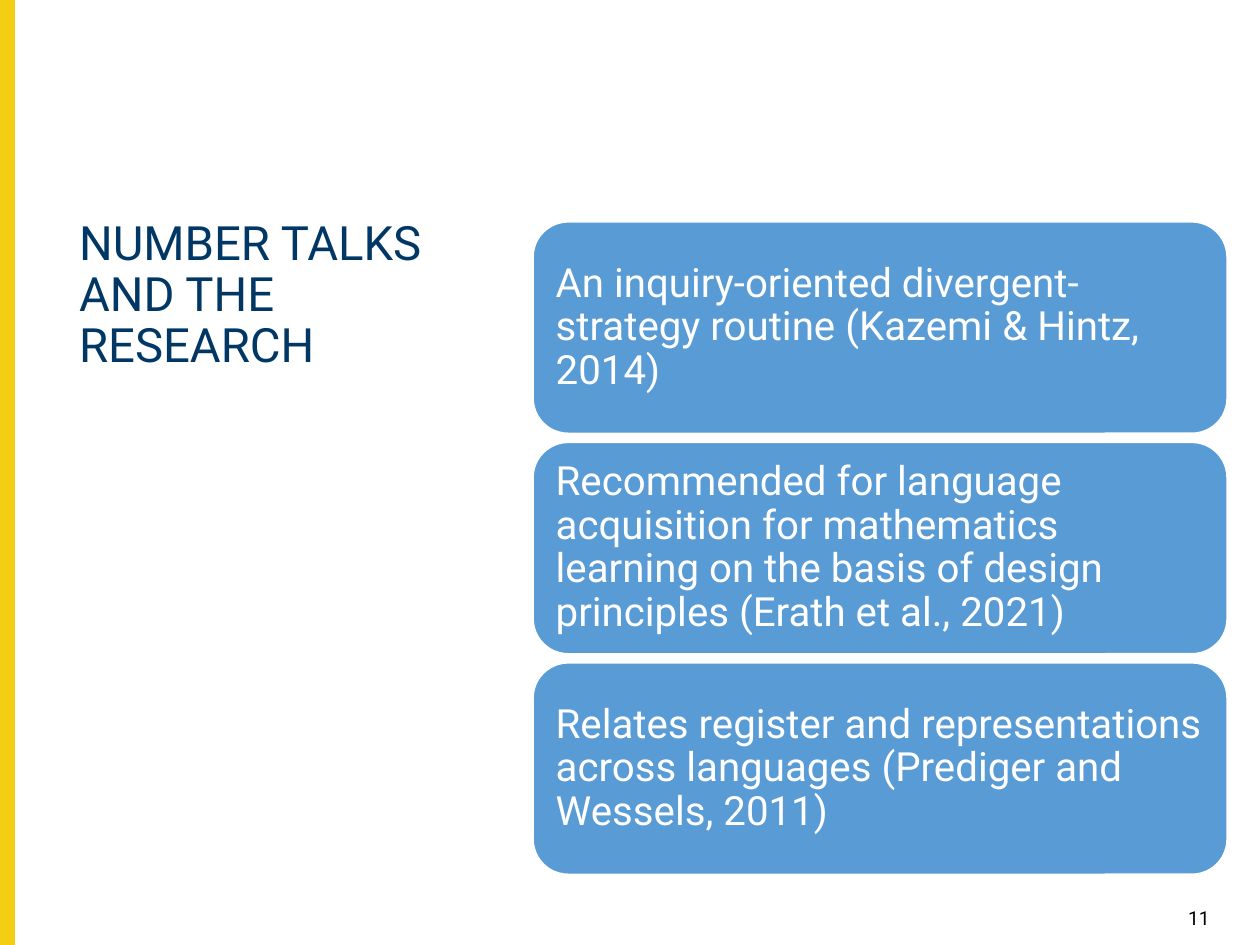
from dataclasses import dataclass

from pptx import Presentation
from pptx.dml.color import RGBColor
from pptx.enum.shapes import MSO_SHAPE
from pptx.enum.text import MSO_ANCHOR, PP_ALIGN
from pptx.shapes.autoshape import Shape
from pptx.slide import Slide
from pptx.util import Inches, Pt


@dataclass(frozen=True)
class Theme:
    """Colours, font and type sizes of the slide."""
    font: str = "Roboto"
    navy: str = "003764"
    yellow: str = "F4CE12"
    blue: str = "599BD5"
    white: str = "FFFFFF"
    black: str = "000000"
    title: int = 27
    body: int = 23
    number: int = 11


@dataclass(frozen=True)
class Box:
    """A rectangle in inches."""
    left: float
    top: float
    width: float
    height: float

    def emu(self) -> list[int]:
        """Give the position and size as lengths."""
        return [Inches(v) for v in (self.left, self.top, self.width, self.height)]


@dataclass(frozen=True)
class TextStyle:
    """How a block of text is set."""
    size: int
    color: str
    anchor: MSO_ANCHOR
    align: PP_ALIGN = PP_ALIGN.LEFT
    spacing: float = 0.9
    margin_y: float = 0.1


THEME = Theme()
WIDTH, HEIGHT = 10, 7.5
FIRST_CARD = Box(4.23, 1.76, 5.51, 1.68)
CARD_PITCH = 1.75
CARD_STYLE = TextStyle(THEME.body, THEME.white, MSO_ANCHOR.MIDDLE)
CARDS = (
    "An inquiry-oriented divergent-strategy routine (Kazemi & Hintz, 2014)",
    "Recommended for language acquisition for mathematics learning on the basis "
    "of design principles (Erath et al., 2021)",
    "Relates register and representations across languages (Prediger and Wessels, 2011)",
)


def write(s: Shape, text: str, style: TextStyle) -> None:
    """Set one styled paragraph in a shape."""
    tf = s.text_frame
    frame = {"word_wrap": True, "vertical_anchor": style.anchor,
             "margin_left": Inches(0.1), "margin_right": Inches(0.1),
             "margin_top": Inches(style.margin_y),
             "margin_bottom": Inches(style.margin_y)}
    for name, value in frame.items():
        setattr(tf, name, value)
    p = tf.paragraphs[0]
    p.alignment, p.line_spacing = style.align, style.spacing
    r = p.add_run()
    r.text = text
    for name, value in {"name": THEME.font, "size": Pt(style.size)}.items():
        setattr(r.font, name, value)
    r.font.color.rgb = RGBColor.from_string(style.color)


def add_text(slide: Slide, box: Box, text: str, style: TextStyle) -> None:
    """Add a text box."""
    write(slide.shapes.add_textbox(*box.emu()), text, style)


def add_panel(slide: Slide, kind: MSO_SHAPE, box: Box, fill: str, line: str) -> Shape:
    """Add a filled shape with a thin outline."""
    s = slide.shapes.add_shape(kind, *box.emu())
    s.shadow.inherit = False
    s.fill.solid()
    s.fill.fore_color.rgb = RGBColor.from_string(fill)
    s.line.color.rgb = RGBColor.from_string(line)
    s.line.width = Pt(1)
    return s


def add_card(slide: Slide, row: int, text: str) -> None:
    """Add one rounded card in the given row."""
    box = Box(FIRST_CARD.left, FIRST_CARD.top + row * CARD_PITCH,
              FIRST_CARD.width, FIRST_CARD.height)
    s = add_panel(slide, MSO_SHAPE.ROUNDED_RECTANGLE, box, THEME.blue, THEME.white)
    write(s, text, CARD_STYLE)


def main() -> None:
    """Build the slide and save it."""
    prs = Presentation()
    prs.slide_width, prs.slide_height = Inches(WIDTH), Inches(HEIGHT)
    slide = prs.slides.add_slide(prs.slide_layouts[6])
    add_panel(slide, MSO_SHAPE.RECTANGLE, Box(0, 0, 0.11, HEIGHT),
              THEME.yellow, THEME.yellow)
    add_text(slide, Box(0.53, 1.52, 3.46, 1.54), "NUMBER TALKS AND THE RESEARCH",
             TextStyle(THEME.title, THEME.navy, MSO_ANCHOR.BOTTOM))
    add_text(slide, Box(9.2, 7.14, 0.5, 0.21), "11",
             TextStyle(THEME.number, THEME.black, MSO_ANCHOR.TOP, PP_ALIGN.RIGHT, 1.0, 0.05))
    for row, text in enumerate(CARDS):
        add_card(slide, row, text)
    prs.save("out.pptx")


if __name__ == "__main__":
    main()
